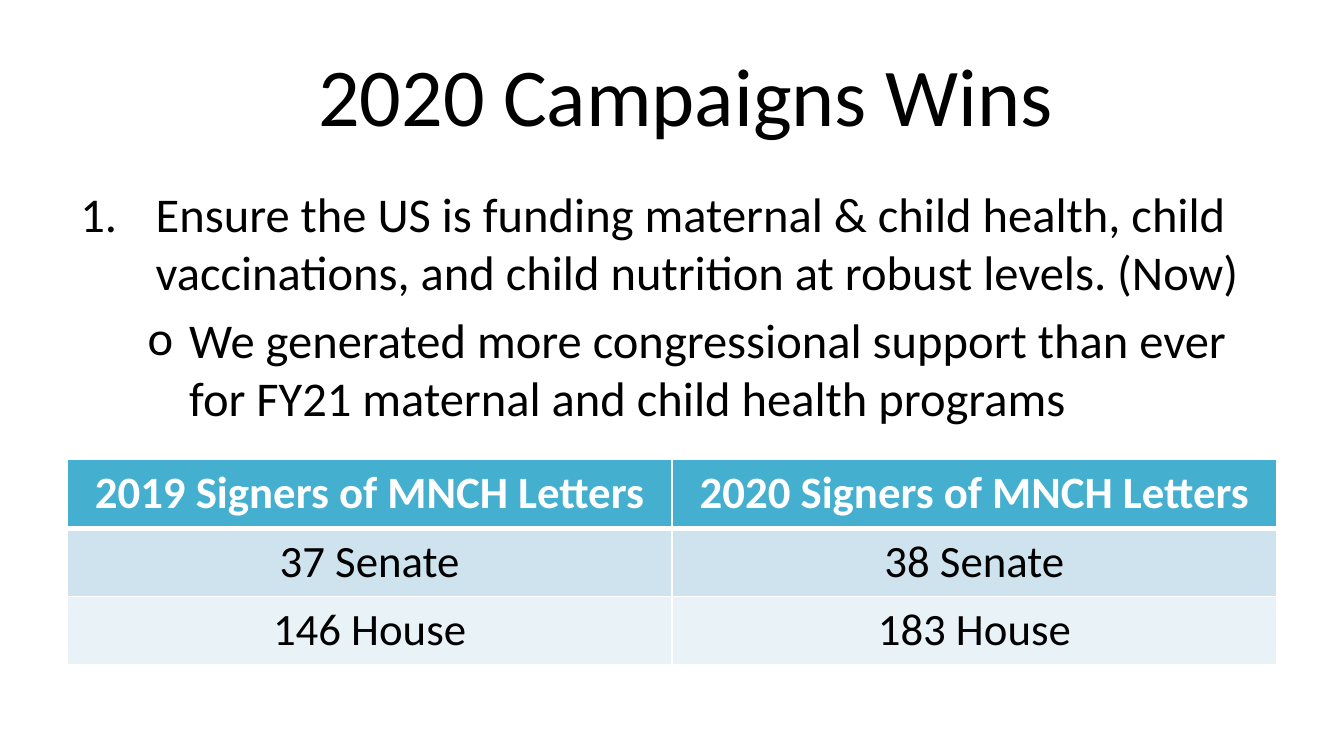
"""Build the 2020 campaign wins slide."""
from lxml import etree
from pptx import Presentation
from pptx import util as u
from pptx.dml.color import RGBColor
from pptx.enum import text
from pptx.oxml import ns

HUES = {"ink": "000000", "white": "FFFFFF", "head": "45AFD0",
        "odd": "CFE3EE", "even": "E9F2F7"}
POINTS = [
    ("Ensure the US is funding maternal & child health, child vaccinations, "
     "and child nutrition at robust levels. (Now)",
     0, 0.56, -0.56, "buAutoNum", {"type": "arabicPeriod"}),
    ("We generated more congressional support than ever for FY21 maternal "
     "and child health programs",
     1, 0.81, -0.31, "buChar", {"char": "o"}),
]
ROWS = [
    ("head", ("2019 Signers of MNCH Letters", "2020 Signers of MNCH Letters")),
    ("odd", ("37 Senate", "38 Senate")),
    ("even", ("146 House", "183 House")),
]


class Deck:
    """Hold the style and the current slide."""

    def __init__(self, wide, high, face):
        """Start a deck with one title-only slide."""
        self.prs = Presentation()
        self.prs.slide_width = u.Inches(wide)
        self.prs.slide_height = u.Inches(high)
        self.face = face
        self.slide = self.prs.slides.add_slide(self.prs.slide_layouts[5])

    def style(self, para, size, hue="ink", bold=False):
        """Format every run of a paragraph."""
        for run in para.runs:
            font = run.font
            font.name, font.size, font.bold = self.face, u.Pt(size), bold
            font.color.rgb = RGBColor.from_string(HUES[hue])

    def title(self, words, box, size):
        """Place and fill the title."""
        shape = self.slide.shapes.title
        shape.left, shape.top, shape.width, shape.height = map(u.Inches, box)
        frame = shape.text_frame
        frame.text = words
        frame.vertical_anchor = text.MSO_ANCHOR.MIDDLE
        para = frame.paragraphs[0]
        para.alignment = text.PP_ALIGN.CENTER
        self.style(para, size)

    def points(self, items, box, size):
        """Add a text box of numbered and bulleted paragraphs."""
        frame = self.slide.shapes.add_textbox(*map(u.Inches, box)).text_frame
        frame.word_wrap = True
        for i, (words, level, left, hang, tag, attrs) in enumerate(items):
            para = frame.add_paragraph() if i else frame.paragraphs[0]
            para.text = words
            para.level = level
            props = para._p.get_or_add_pPr()
            props.set("marL", str(u.Inches(left)))
            props.set("indent", str(u.Inches(hang)))
            etree.SubElement(props, ns.qn("a:buFont"), typeface=self.face)
            etree.SubElement(props, ns.qn("a:" + tag), **attrs)
            if i:
                para.space_before = u.Pt(size * 0.2)
            self.style(para, size)

    def edges(self, cell, base):
        """Draw white cell borders with a given bottom width."""
        props = cell._tc.get_or_add_tcPr()
        for i, (side, width) in enumerate(zip("LRTB", (1, 1, 1, base))):
            line = etree.Element(ns.qn("a:ln" + side), w=str(u.Pt(width)))
            fill = etree.SubElement(line, ns.qn("a:solidFill"))
            etree.SubElement(fill, ns.qn("a:srgbClr"), val=HUES["white"])
            props.insert(i, line)

    def table(self, rows, box, size):
        """Add a table with a bold head row."""
        grid = self.slide.shapes.add_table(
            len(rows), len(rows[0][1]), *map(u.Inches, box)).table
        grid.horz_banding = False
        for r, (hue, words) in enumerate(rows):
            head = r == 0
            for c, word in enumerate(words):
                cell = grid.cell(r, c)
                cell.text = word
                cell.fill.solid()
                cell.fill.fore_color.rgb = RGBColor.from_string(HUES[hue])
                para = cell.text_frame.paragraphs[0]
                para.alignment = text.PP_ALIGN.CENTER
                self.style(para, size, "white" if head else "ink", head)
                self.edges(cell, 3 if head else 1)


def main():
    """Build and save the slide."""
    wide = 10
    deck = Deck(wide, wide * 9 / 16, "Calibri")
    deck.title("2020 Campaigns Wins", (1.88, 0.23, 6.45, 0.94), 44)
    deck.points(POINTS, (0.5, 1.32, 9, 3.71), 26)
    deck.table(ROWS, (0.5, 3.42, 9, 1.53), 24)
    deck.prs.save("out.pptx")


if __name__ == "__main__":
    main()
